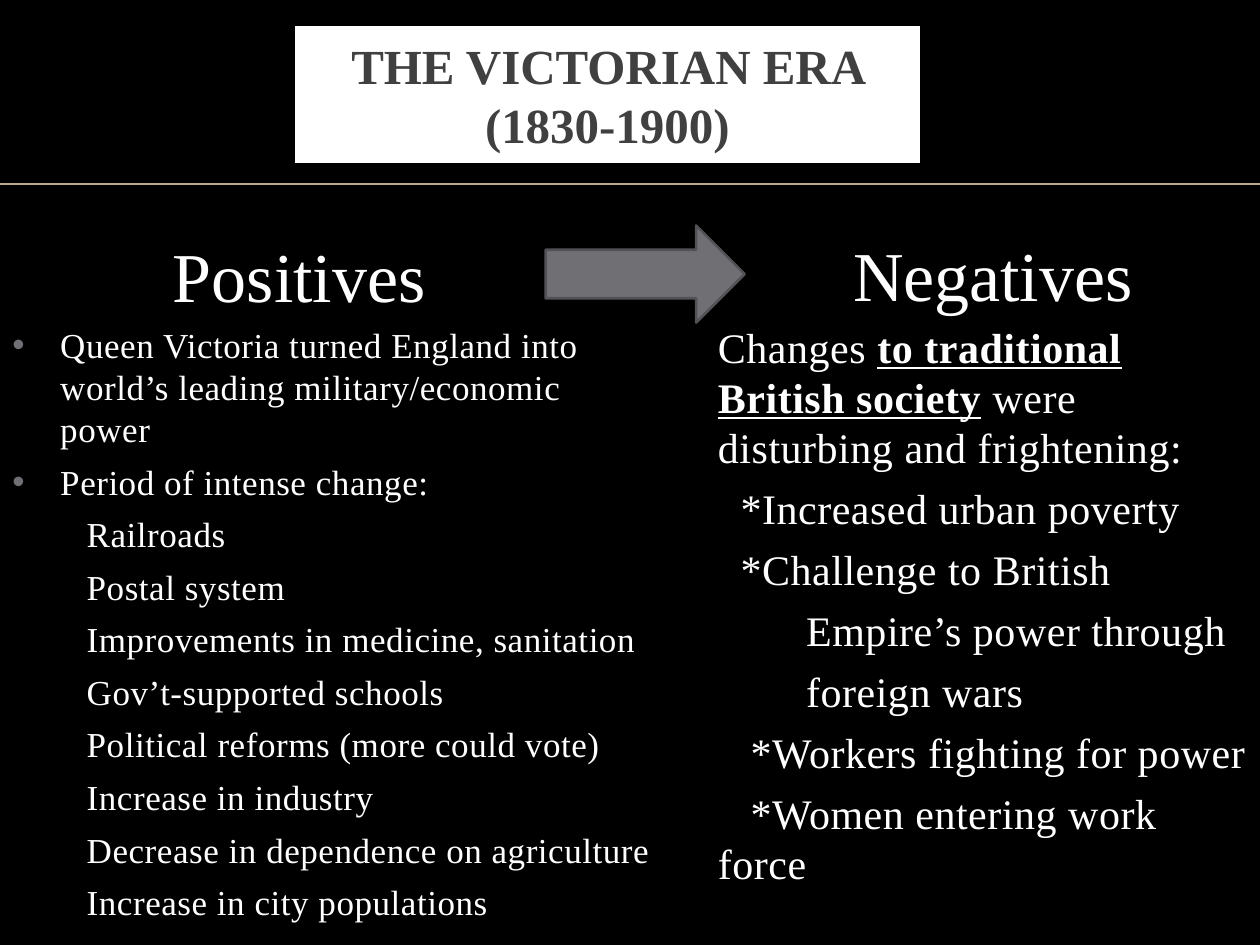
"""Build the Victorian Era slide of positives and negatives."""
from dataclasses import dataclass

import pptx
import pptx.dml.color
import pptx.enum.shapes
import pptx.enum.text
import pptx.oxml
import pptx.oxml.ns
import pptx.util
from pptx.util import Inches

SHAPES = pptx.enum.shapes.MSO_SHAPE
ALIGN = pptx.enum.text.PP_ALIGN
ANCHOR = pptx.enum.text.MSO_ANCHOR
NAMESPACE = pptx.oxml.ns.nsdecls("a")


@dataclass(frozen=True)
class Theme:
    """Hold the colours, font and type sizes of the slide."""
    background: str = "000000"
    light: str = "FFFFFF"
    title: str = "404040"
    rule: str = "BBAA8A"
    accent: str = "6F6F74"
    accent_edge: str = "525256"
    font: str = "Times New Roman"
    title_size: int = 28
    heading_size: int = 40
    positives_size: int = 20
    negatives_size: int = 24
    tracking: int = 30


THEME = Theme()

POSITIVE_POINTS = [
    "Queen Victoria turned England into world’s leading military/economic power",
    "Period of intense change:",
]
CHANGES = [
    "Railroads",
    "Postal system",
    "Improvements in medicine, sanitation",
    "Gov’t-supported schools",
    "Political reforms (more could vote)",
    "Increase in industry",
    "Decrease in dependence on agriculture",
    "Increase in city populations",
]
NEGATIVE_INTRO = [
    ("Changes ", False),
    ("to traditional British society", True),
    (" were disturbing and frightening:", False),
]
NEGATIVE_POINTS = [
    ("*Increased urban poverty", 0.18),
    ("*Challenge to British", 0.18),
    ("Empire’s power through", 0.7),
    ("foreign wars", 0.7),
    ("*Workers fighting for power", 0.26),
    ("*Women entering work force", 0.26),
]


def rgb(code):
    """Turn a hex code into a colour."""
    return pptx.dml.color.RGBColor.from_string(code)


def add_run(paragraph, text, size, color=THEME.light, bold=False, underline=False, tracking=0):
    """Add one styled run to a paragraph."""
    run = paragraph.add_run()
    run.text = text
    run.font.name = THEME.font
    run.font.size = pptx.util.Pt(size)
    run.font.color.rgb = rgb(color)
    run.font.bold = bold
    run.font.underline = underline
    if tracking:
        run._r.get_or_add_rPr().set("spc", str(tracking))


def add_text_frame(slide, left, top, width, height):
    """Add a wrapping text box and return its text frame."""
    frame = slide.shapes.add_textbox(
        Inches(left), Inches(top), Inches(width), Inches(height)).text_frame
    frame.word_wrap = True
    return frame


def add_body_paragraph(frame, runs, size, margin=0, indent=0, bullet=False):
    """Add a body paragraph from (text, emphasised) pairs."""
    first = frame.paragraphs[0]
    paragraph = frame.add_paragraph() if first.runs else first
    paragraph.space_before = pptx.util.Pt(6)
    properties = paragraph._p.get_or_add_pPr()
    properties.set("marL", str(Inches(margin)))
    properties.set("indent", str(Inches(indent)))
    if bullet:
        for xml in (
            f'<a:buClr {NAMESPACE}><a:srgbClr val="{THEME.accent}"/></a:buClr>',
            f'<a:buFont {NAMESPACE} typeface="Arial"/>',
            f'<a:buChar {NAMESPACE} char="•"/>',
        ):
            properties.append(pptx.oxml.parse_xml(xml))
    for text, emphasised in runs:
        add_run(paragraph, text, size, bold=emphasised, underline=emphasised,
                tracking=THEME.tracking)


def add_block(slide, preset, left, top, width, height, fill, edge, edge_width):
    """Add a filled, outlined preset shape without shadow."""
    block = slide.shapes.add_shape(
        preset, Inches(left), Inches(top), Inches(width), Inches(height))
    block.shadow.inherit = False
    block.fill.solid()
    block.fill.fore_color.rgb = rgb(fill)
    block.line.color.rgb = rgb(edge)
    block.line.width = pptx.util.Pt(edge_width)
    return block


def add_rule(slide, top):
    """Draw the thin line across the slide."""
    rule = slide.shapes.add_connector(
        pptx.enum.shapes.MSO_CONNECTOR.STRAIGHT, 0, Inches(top), Inches(10), Inches(top))
    rule.line.color.rgb = rgb(THEME.rule)
    rule.line.width = pptx.util.Pt(1)
    rule._element.spPr.append(pptx.oxml.parse_xml(f'<a:effectLst {NAMESPACE}/>'))


def add_title(slide, text):
    """Add the white title panel with square corners."""
    panel = add_block(slide, SHAPES.RECTANGLE, 2.38, 0.25, 4.88, 1,
                      THEME.light, THEME.light, 6)
    panel.line._get_or_add_ln().append(
        pptx.oxml.parse_xml(f'<a:miter {NAMESPACE} lim="800000"/>'))
    frame = panel.text_frame
    frame.word_wrap = True
    frame.vertical_anchor = ANCHOR.MIDDLE
    paragraph = frame.paragraphs[0]
    paragraph.alignment = ALIGN.CENTER
    add_run(paragraph, text, THEME.title_size, THEME.title, bold=True)


def add_heading(slide, text, left, top, width):
    """Add a centred column heading."""
    paragraph = add_text_frame(slide, left, top, width, 0.77).paragraphs[0]
    paragraph.alignment = ALIGN.CENTER
    add_run(paragraph, text, THEME.heading_size)


def add_positives(slide):
    """Add the left column."""
    frame = add_text_frame(slide, 0, 2.52, 5.33, 4.58)
    for point in POSITIVE_POINTS:
        add_body_paragraph(frame, [(point, False)], THEME.positives_size,
                           margin=0.38, indent=-0.38, bullet=True)
    for change in CHANGES:
        add_body_paragraph(frame, [(change, False)], THEME.positives_size, margin=0.59)


def add_negatives(slide):
    """Add the right column."""
    frame = add_text_frame(slide, 5.6, 2.5, 4.4, 4.17)
    add_body_paragraph(frame, NEGATIVE_INTRO, THEME.negatives_size)
    for point, indent in NEGATIVE_POINTS:
        add_body_paragraph(frame, [(point, False)], THEME.negatives_size, indent=indent)


def main():
    """Build and save the slide."""
    deck = pptx.Presentation()
    deck.slide_width, deck.slide_height = Inches(10), Inches(7.5)
    slide = deck.slides.add_slide(deck.slide_layouts[6])
    slide.background.fill.solid()
    slide.background.fill.fore_color.rgb = rgb(THEME.background)
    add_rule(slide, 1.46)
    add_positives(slide)
    add_negatives(slide)
    add_title(slide, "THE VICTORIAN ERA (1830-1900)")
    add_heading(slide, "Positives", 1.25, 1.8, 2.25)
    add_block(slide, SHAPES.RIGHT_ARROW, 4.33, 1.79, 1.58, 0.77,
              THEME.accent, THEME.accent_edge, 1.5)
    add_heading(slide, "Negatives", 6.67, 1.79, 2.42)
    deck.save("out.pptx")


if __name__ == "__main__":
    main()
